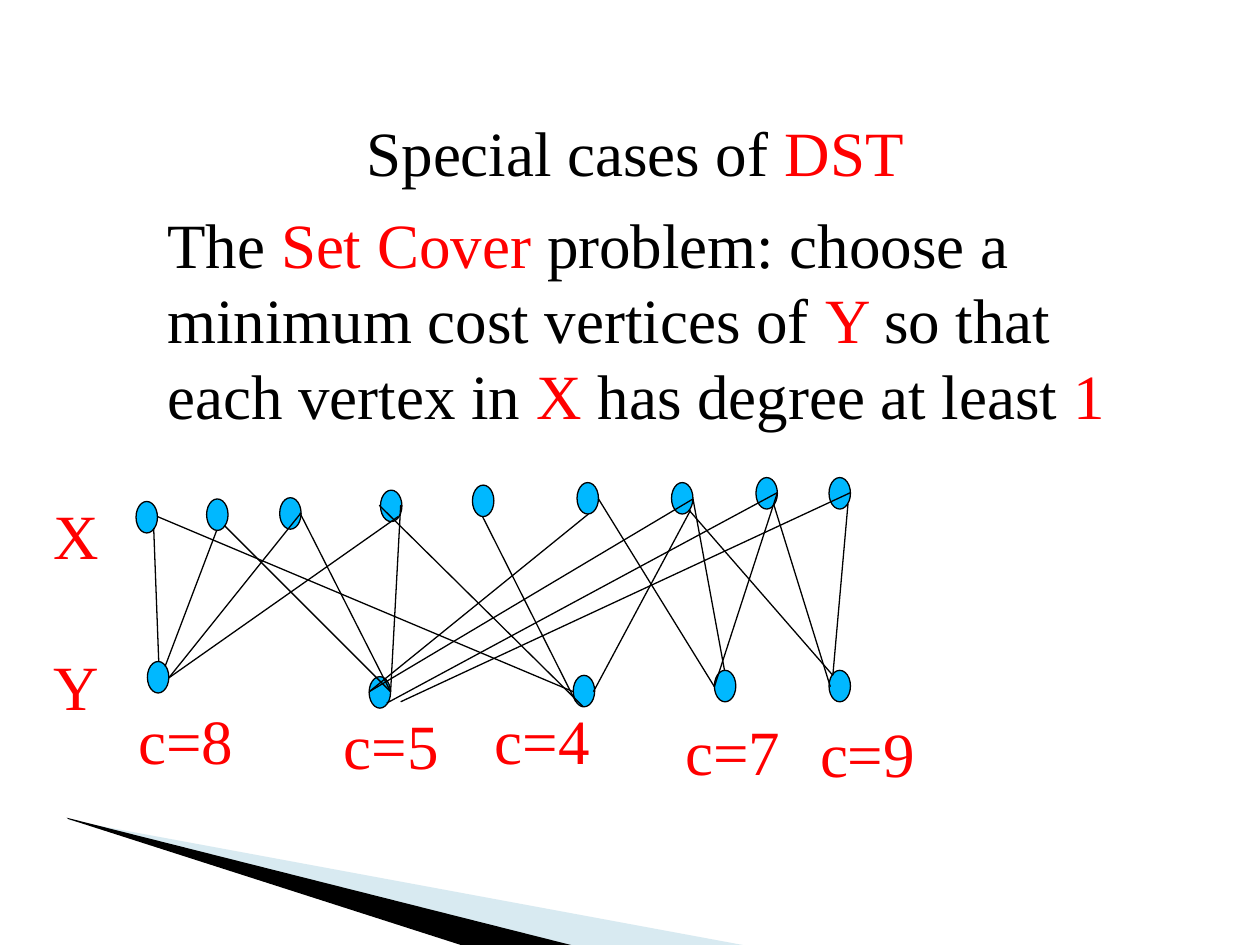
"""Draw the Set Cover slide: costs on Y, coverage edges up to X."""
from typing import NamedTuple

from lxml.etree import SubElement
from pptx import Presentation
from pptx.dml.color import RGBColor
from pptx.enum.shapes import MSO_CONNECTOR, MSO_SHAPE
from pptx.enum.text import MSO_AUTO_SIZE, PP_ALIGN
from pptx.oxml.ns import qn
from pptx.util import Pt

PX = 9144
BLACK, RED, BLUE, PALE = "000000", "FF0000", "00B8FF", "9FCBDC"
NODE_WIDTH, NODE_HEIGHT = 17, 25
FONT = {"name": "Times New Roman", "size": Pt(36)}
FRAME = {"word_wrap": True, "auto_size": MSO_AUTO_SIZE.SHAPE_TO_FIT_TEXT}


class Node(NamedTuple):
    """Top left corner of a vertex."""
    left: int
    top: int


class Edge(NamedTuple):
    """Start and end of a line between Y and X."""
    x1: int
    y1: int
    x2: int
    y2: int


class Label(NamedTuple):
    """A text box of coloured spans."""
    left: int
    top: int
    width: int
    height: int
    spans: tuple
    align: PP_ALIGN = PP_ALIGN.LEFT


class Wedge(NamedTuple):
    """A filled corner decoration."""
    points: tuple
    color: str
    opacity: int


WEDGES = (
    Wedge(((55, 651), (595, 751), (456, 751), (55, 650)), PALE, 40),
    Wedge(((53, 649), (457, 751), (372, 752), (54, 650)), BLACK, 100),
)
X_NODES = (
    Node(108, 398), Node(164, 396), Node(222, 395), Node(302, 389), Node(375, 385),
    Node(458, 383), Node(533, 383), Node(600, 379), Node(658, 379),
)
Y_NODES = (Node(117, 525), Node(293, 537), Node(455, 536), Node(567, 532), Node(658, 532))
EDGES = (
    Edge(126, 525, 122, 419), Edge(131, 529, 172, 421), Edge(134, 538, 239, 407),
    Edge(134, 538, 316, 410), Edge(310, 549, 178, 417), Edge(310, 549, 238, 407),
    Edge(310, 549, 318, 401), Edge(293, 549, 467, 408), Edge(383, 410, 457, 557),
    Edge(471, 549, 548, 405), Edge(463, 561, 301, 401), Edge(661, 536, 547, 405),
    Edge(661, 536, 673, 400), Edge(659, 545, 614, 400), Edge(455, 549, 125, 410),
    Edge(293, 549, 550, 396), Edge(307, 558, 617, 391), Edge(318, 557, 675, 391),
    Edge(567, 545, 475, 396), Edge(575, 532, 550, 396), Edge(567, 545, 617, 391),
)
LABELS = (
    Label(108, 85, 792, 70, (("Special cases of ", BLACK), ("DST", RED)), PP_ALIGN.CENTER),
    Label(100, 552, 174, 70, (("c=8", RED),)),
    Label(263, 556, 129, 70, (("c=5", RED),)),
    Label(383, 552, 129, 70, (("c=4", RED),)),
    Label(534, 561, 129, 70, (("c=7", RED),)),
    Label(641, 562, 129, 70, (("c=9", RED),)),
    Label(123, 158, 783, 310, (
        ("The ", BLACK), ("Set Cover ", RED),
        ("problem: choose a minimum cost vertices of ", BLACK), ("Y ", RED),
        ("so that each vertex in ", BLACK), ("X ", RED),
        ("has degree at least ", BLACK), ("1", RED),
    )),
    Label(33, 389, 67, 70, (("X", RED),)),
    Label(33, 509, 42, 70, (("Y", RED),)),
)


def rgb(color: str) -> RGBColor:
    """Turn a hex string into a colour."""
    return RGBColor.from_string(color)


def apply(target, values: dict) -> None:
    """Set each format value on the target."""
    for name, value in values.items():
        setattr(target, name, value)


def outline(line) -> None:
    """Give a line the thin black stroke."""
    line.color.rgb = rgb(BLACK)
    line.width = Pt(0.75)


def draw_wedge(page, wedge: Wedge) -> None:
    """Draw one corner decoration."""
    builder = page.shapes.build_freeform(*wedge.points[0], scale=PX)
    builder.add_line_segments(wedge.points[1:], close=True)
    shape = builder.convert_to_shape()
    shape.shadow.inherit = False
    shape.fill.solid()
    shape.fill.fore_color.rgb = rgb(wedge.color)
    shape.line.fill.background()
    if wedge.opacity < 100:
        color = next(shape.element.spPr.iter(qn("a:srgbClr")))
        SubElement(color, qn("a:alpha"), val=str(wedge.opacity * 1000))


def draw_node(page, node: Node) -> None:
    """Draw one vertex."""
    bounds = (node.left, node.top, NODE_WIDTH, NODE_HEIGHT)
    shape = page.shapes.add_shape(MSO_SHAPE.OVAL, *(value * PX for value in bounds))
    shape.shadow.inherit = False
    shape.fill.solid()
    shape.fill.fore_color.rgb = rgb(BLUE)
    outline(shape.line)


def draw_edge(page, edge: Edge) -> None:
    """Draw one line between the two rows."""
    connector = page.shapes.add_connector(MSO_CONNECTOR.STRAIGHT, *(value * PX for value in edge))
    outline(connector.line)
    SubElement(connector.element.spPr, qn("a:effectLst"))


def draw_label(page, label: Label) -> None:
    """Draw one text box."""
    bounds = (label.left, label.top, label.width, label.height)
    box = page.shapes.add_textbox(*(value * PX for value in bounds))
    apply(box.text_frame, FRAME)
    para = box.text_frame.paragraphs[0]
    apply(para, {"alignment": label.align, "line_spacing": Pt(43.2)})
    for text, color in label.spans:
        span = para.add_run()
        span.text = text
        apply(span.font, FONT)
        span.font.color.rgb = rgb(color)


def main() -> None:
    """Build and save the deck."""
    deck = Presentation()
    apply(deck, {"slide_width": 1000 * PX, "slide_height": 750 * PX})
    page = deck.slides.add_slide(deck.slide_layouts[6])
    for draw, items in (
        (draw_wedge, WEDGES),
        (draw_node, X_NODES + Y_NODES),
        (draw_edge, EDGES),
        (draw_label, LABELS),
    ):
        for item in items:
            draw(page, item)
    deck.save("out.pptx")


if __name__ == "__main__":
    main()
